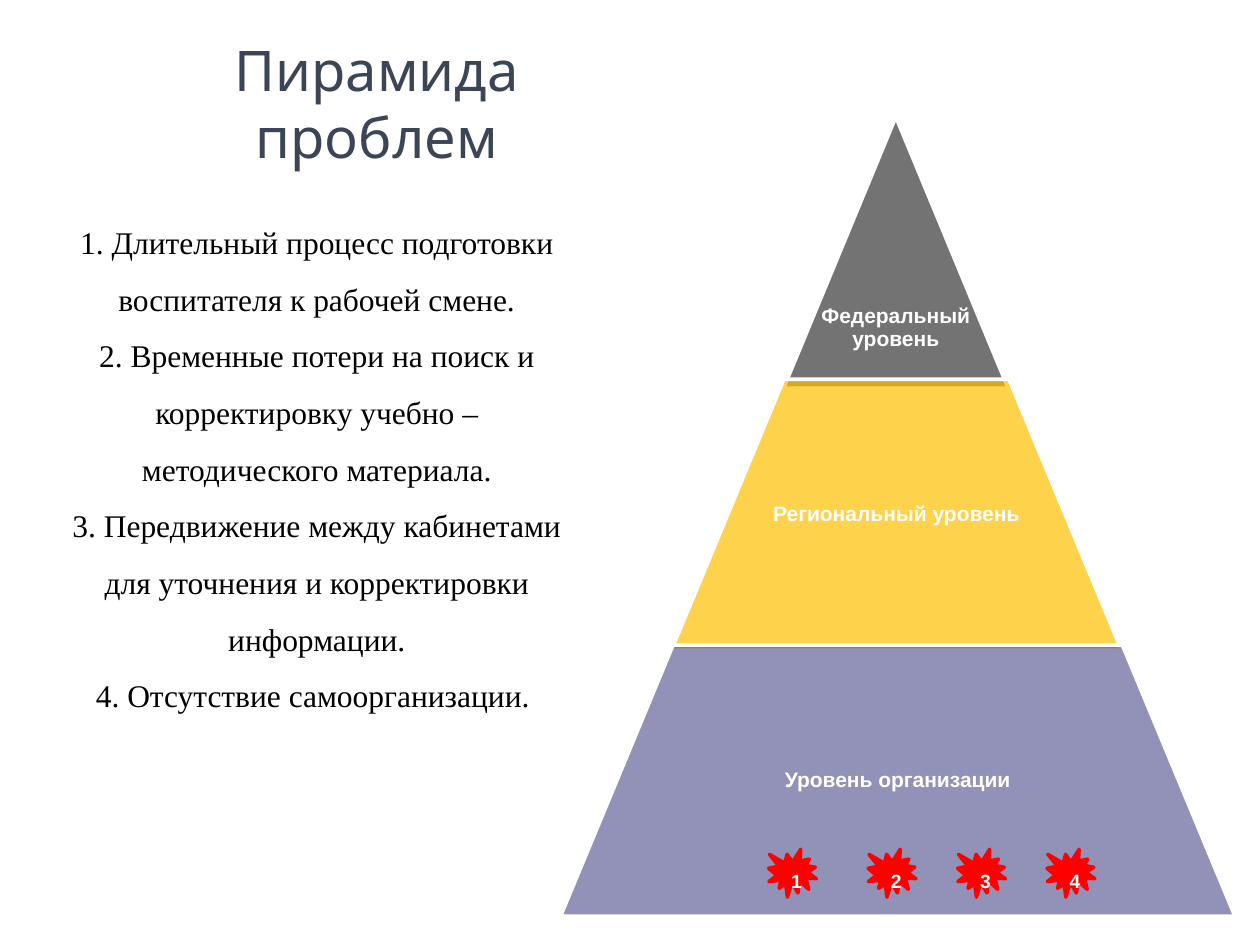
from lxml import etree
from pptx import Presentation
from pptx.dml.color import RGBColor
from pptx.enum.shapes import MSO_SHAPE as Shape
from pptx.enum.text import MSO_ANCHOR as Anchor, PP_ALIGN as Align
from pptx.oxml.ns import qn
from pptx.util import Inches, Pt

WHITE = RGBColor(0xFF, 0xFF, 0xFF)
BLACK = RGBColor(0, 0, 0)
SLATE = RGBColor(0x3B, 0x45, 0x55)
GRAY = RGBColor(0x73, 0x73, 0x73)
GOLD = RGBColor(0xFF, 0xC0, 0x00)
NAVY = RGBColor(0x26, 0x26, 0x73)
RED = RGBColor(0xFF, 0, 0)


class PyramidSlide:
    """Holds the slide and draws its elements in one style."""

    label_font = "Arial"

    def __init__(self, slide):
        self.slide = slide

    def set_text(self, frame, lines, font, size, color, bold=False, spacing=None):
        frame.word_wrap = True
        frame.text = "\n".join(lines)
        for paragraph in frame.paragraphs:
            paragraph.alignment = Align.CENTER
            if spacing:
                paragraph.line_spacing = spacing
            for run in paragraph.runs:
                run.font.name = font
                run.font.size = Pt(size)
                run.font.bold = bold
                run.font.color.rgb = color

    def text(self, box, lines, font, size, color, **style):
        frame = self.slide.shapes.add_textbox(*map(Inches, box)).text_frame
        self.set_text(frame, lines, font, size, color, **style)
        return frame

    def shape(self, kind, box, fill, line, opacity=100):
        shape = self.slide.shapes.add_shape(kind, *map(Inches, box))
        shape.shadow.inherit = False
        shape.fill.solid()
        shape.fill.fore_color.rgb = fill
        if opacity < 100:
            color = shape.element.spPr.find(qn("a:solidFill")).find(qn("a:srgbClr"))
            etree.SubElement(color, qn("a:alpha"), val=str(opacity * 1000))
        shape.line.color.rgb = line
        shape.line.width = Pt(2)
        return shape

    def tier(self, box, slope, fill, opacity):
        trapezoid = self.shape(Shape.TRAPEZOID, box, fill, WHITE, opacity)
        trapezoid.adjustments[0] = slope

    def tier_label(self, box, label):
        frame = self.text(box, [label], self.label_font, 12, WHITE,
                          bold=True, spacing=0.9)
        frame.vertical_anchor = Anchor.MIDDLE
        frame.margin_left = frame.margin_right = Inches(0.02)
        frame.margin_top = frame.margin_bottom = Inches(0.02)

    def marker(self, left, number):
        seal = self.shape(Shape.EXPLOSION1, (left, 6.74, 0.38, 0.38), RED, RED)
        self.set_text(seal.text_frame, [str(number)], self.label_font, 11, WHITE, bold=True)
        seal.text_frame.vertical_anchor = Anchor.TOP


def main():
    deck = Presentation()
    deck.slide_width, deck.slide_height = Inches(10), Inches(7.5)
    page = PyramidSlide(deck.slides.add_slide(deck.slide_layouts[6]))

    # Title
    page.text((0.86, 0.23, 4.26, 1.17), ["Пирамида проблем"], "Quicksand", 32, SLATE)

    # Pyramid tiers with their labels
    height = 2.15
    tiers = [
        (6.22, 0.93, 1.78, 0.5, GRAY, 100, "Федеральный уровень", 1.78, 0.6),
        (5.33, 3.01, 3.57, 0.415, GOLD, 70, "Региональный уровень", 2.32, 0),
        (4.45, 5.12, 5.35, 0.415, NAVY, 50, "Уровень организации", 3.48, 0),
    ]
    for left, top, width, slope, fill, opacity, label, label_width, drop in tiers:
        page.tier((left, top, width, height), slope, fill, opacity)
        label_left = left + (width - label_width) / 2
        page.tier_label((label_left, top + drop, label_width, height), label)

    # Problem list
    problems = [
        "1. Длительный процесс подготовки воспитателя к рабочей смене.",
        "2. Временные потери на поиск и корректировку учебно – методического материала.",
        "3. Передвижение между кабинетами для уточнения и корректировки информации.",
        "4. Отсутствие самоорганизации. ",
    ]
    page.text((0.43, 1.57, 4.17, 5.9), problems, "Times New Roman", 18, BLACK, spacing=1.5)

    # Problem markers on the lowest tier
    for number, left in enumerate((6.1, 6.89, 7.6, 8.31), start=1):
        page.marker(left, number)

    deck.save("out.pptx")


if __name__ == "__main__":
    main()
